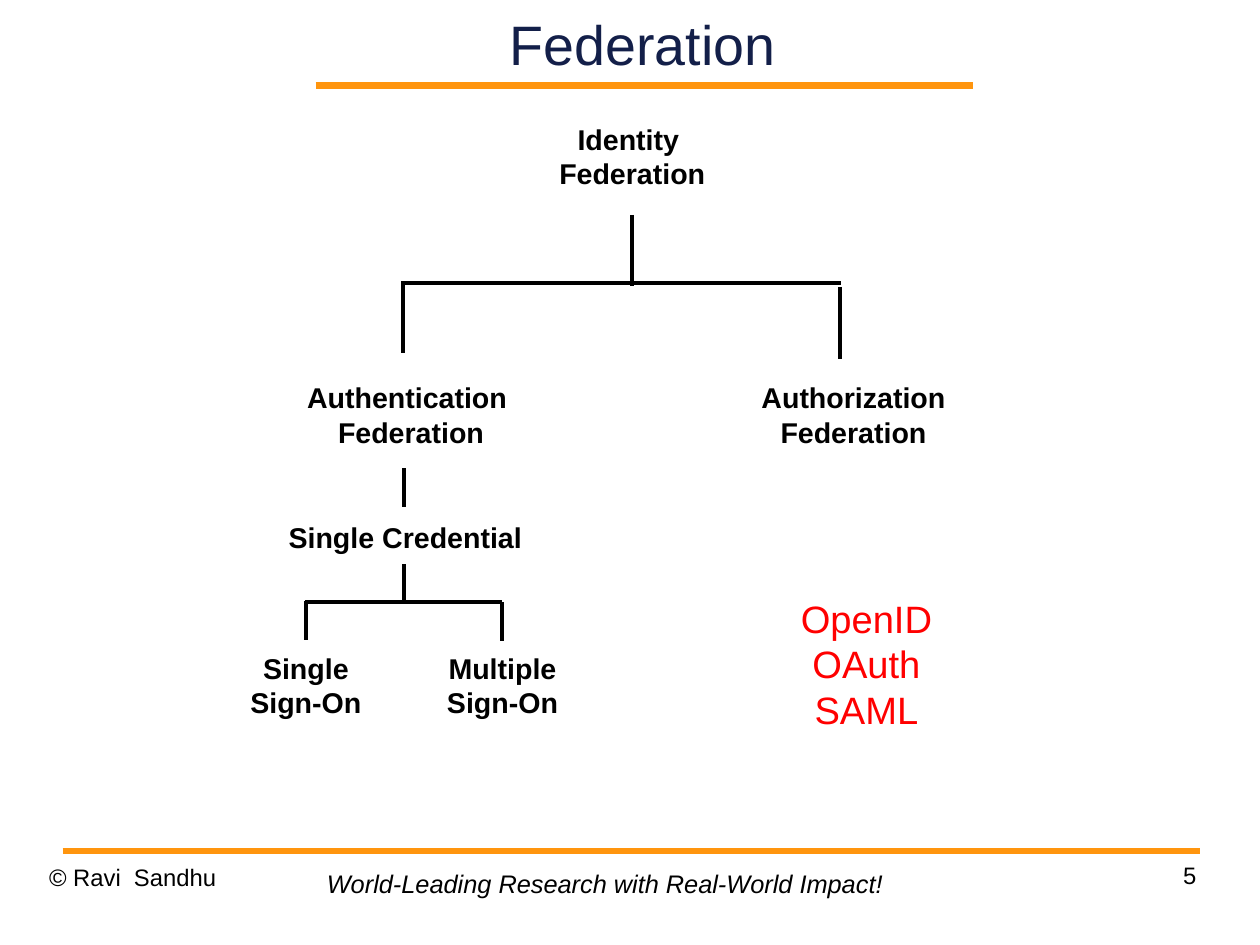
from dataclasses import dataclass
from lxml import etree
from pptx import Presentation
from pptx.dml.color import RGBColor
from pptx.enum.shapes import MSO_CONNECTOR
from pptx.enum.text import MSO_ANCHOR, PP_ALIGN
from pptx.oxml.ns import qn
from pptx.util import Pt

STRAIGHT = MSO_CONNECTOR.STRAIGHT
TOP, MIDDLE = MSO_ANCHOR.TOP, MSO_ANCHOR.MIDDLE
LEFT, CENTER, RIGHT = PP_ALIGN.LEFT, PP_ALIGN.CENTER, PP_ALIGN.RIGHT
WIDE, HIGH = Pt(793.75), Pt(595.25)


@dataclass(frozen=True)
class Theme:
    font: str = "Arial"
    ink: str = "000000"
    navy: str = "131F49"
    red: str = "FF0000"
    gold: str = "FF950E"
    title: float = 35
    list: float = 24
    node: float = 18
    motto: float = 16
    foot: float = 15
    rule: float = 4.31
    branch: float = 2.5


THEME = Theme()


def across(share):
    return round(WIDE * share / 100)


def down(share):
    return round(HIGH * share / 100)


def add_line(slide, start, end, color=THEME.ink, width=THEME.branch):
    line = slide.shapes.add_connector(
        STRAIGHT, across(start[0]), down(start[1]), across(end[0]), down(end[1]))
    line.line.color.rgb = RGBColor.from_string(color)
    line.line.width = Pt(width)
    etree.SubElement(line._element.spPr, qn("a:effectLst"))


def add_rule(slide, left, right, y):
    add_line(slide, (left, y), (right, y), THEME.gold, THEME.rule)


def add_text(slide, area, lines, size, color=THEME.ink, align=CENTER, bold=False,
             italic=False, inset=True, anchor=TOP, wrap=True, spacing=1.0):
    x, y, w, h = area
    box = slide.shapes.add_textbox(across(x), down(y), across(w), down(h))
    frame = box.text_frame
    frame.word_wrap = wrap
    frame.vertical_anchor = anchor
    if not inset:
        frame.margin_left = frame.margin_right = 0
        frame.margin_top = frame.margin_bottom = 0
    for index, text in enumerate(lines):
        para = frame.paragraphs[0] if index == 0 else frame.add_paragraph()
        para.alignment = align
        para.line_spacing = spacing
        run = para.add_run()
        run.text = text
        run.font.name = THEME.font
        run.font.size = Pt(size)
        run.font.bold = bold
        run.font.italic = italic
        run.font.color.rgb = RGBColor.from_string(color)


def add_node(slide, x, y, width, *lines):
    height = 8.59 if len(lines) == 2 else 4.84
    add_text(slide, (x, y, width, height), lines, THEME.node, bold=True)


def add_frame(slide):
    add_rule(slide, 25.05, 77.2, 9.07)
    add_rule(slide, 4.97, 95.25, 90.05)
    add_text(slide, (21.85, 0, 58.33, 9.07), ["Federation"], THEME.title,
             THEME.navy, inset=False, anchor=MIDDLE)
    for x, y, text, align in ((3.9, 91.29, "© Ravi  Sandhu", LEFT),
                              (71.65, 91, "5", RIGHT)):
        add_text(slide, (x, y, 23.3, 6.89), [text], THEME.foot, align=align,
                 inset=False, spacing=1.01)
    add_text(slide, (25.05, 91.29, 47, 4.47),
             ["World-Leading Research with Real-World Impact!"],
             THEME.motto, align=LEFT, italic=True, wrap=False)


def add_tree(slide):
    add_node(slide, 42.34, 12.33, 15.7, "Identity ", "Federation")
    add_node(slide, 23.28, 39.66, 18.69, "Authentication ", "Federation")
    add_node(slide, 58.4, 39.66, 18.69, "Authorization", "Federation")
    add_node(slide, 20.92, 54.41, 22.5, "Single Credential")
    add_node(slide, 18.33, 68.3, 11.89, "Single", "Sign-On")
    add_node(slide, 33.94, 68.3, 11.89, "Multiple", "Sign-On")
    for x, top, end in ((50.16, 22.73, 30.25), (31.95, 29.87, 37.38),
                        (66.65, 30.35, 37.95), (32.03, 49.55, 53.66),
                        (32.03, 59.73, 63.85), (24.3, 63.6, 67.71),
                        (39.88, 63.72, 67.84)):
        add_line(slide, (x, top), (x, end))
    for left, right, y in ((31.85, 66.77, 29.97), (24.23, 39.88, 63.72)):
        add_line(slide, (left, y), (right, y))


def main():
    deck = Presentation()
    deck.slide_width, deck.slide_height = WIDE, HIGH
    slide = deck.slides.add_slide(deck.slide_layouts[6])
    add_frame(slide)
    add_tree(slide)
    add_text(slide, (62.32, 62.39, 12.89, 15.84), ["OpenID", "OAuth", "SAML"],
             THEME.list, THEME.red)
    deck.save("out.pptx")


if __name__ == "__main__":
    main()
